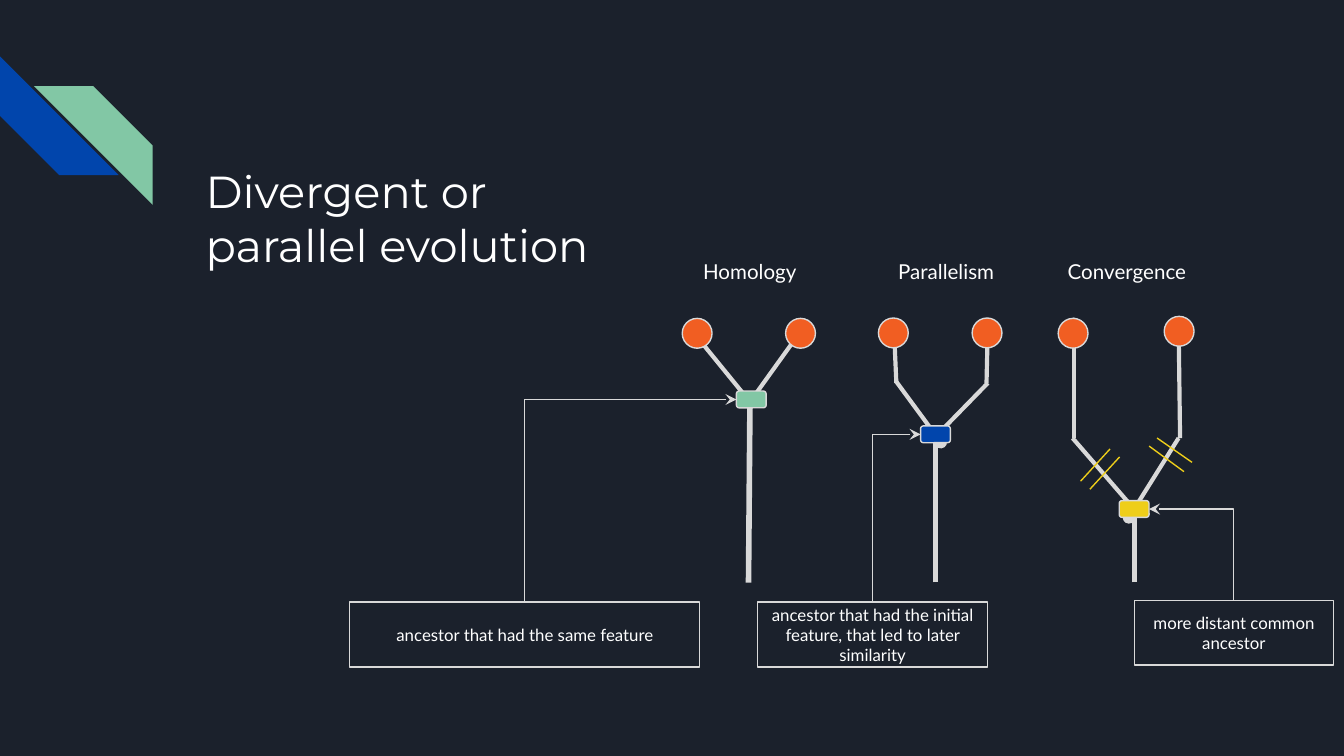
from dataclasses import dataclass

from lxml.etree import SubElement
from pptx import Presentation
from pptx.dml.color import RGBColor
from pptx.enum.shapes import MSO_CONNECTOR, MSO_SHAPE
from pptx.enum.text import MSO_ANCHOR, PP_ALIGN
from pptx.oxml.ns import qn
from pptx.util import Pt


@dataclass(frozen=True)
class Theme:
    back: str = "1B212C"
    blue: str = "0145AC"
    green: str = "82C7A5"
    orange: str = "F15E22"
    yellow: str = "EECE1A"
    grey: str = "D9D9D9"
    white: str = "FFFFFF"
    head_font: str = "Montserrat"
    body_font: str = "Lato"
    title: int = 24
    label: int = 11
    note: int = 9
    thin: float = 0.75
    branch: float = 2.25
    stem: float = 3


THEME = Theme()
TIP = 16
NODE_W, NODE_H = 16, 9
NOTE_H = 34.7

TREES = [
    dict(
        label=("Homology", 357.8, 87.8),
        stem=(401, 312.2, 401.8, 213.1),
        branches=[(401.8, 215.3, 370.1, 176.4, "oval"),
                  (401.8, 215.3, 431.3, 174.2, "oval")],
        tips=[(365.5, 170.6), (420.9, 170.6)],
        cuts=[],
        node=(394.5, 209.5, THEME.green),
        note=("ancestor that had the same feature", 187.4, 322.6, 187.4),
    ),
    dict(
        label=("Parallelism", 463, 87.8),
        stem=(501.1, 312, 501.1, 236.9),
        branches=[(480.2, 205.2, 478.8, 174.2, "oval"),
                  (528.5, 205.2, 529.2, 174.2, "oval"),
                  (480.2, 204.5, 504, 236.9, "oval"),
                  (529.2, 205.2, 501.8, 233.3, None)],
        tips=[(470.6, 170.4), (520.8, 170.4)],
        cuts=[],
        node=(493.2, 228.2, THEME.blue),
        note=("ancestor that had the initial feature, that led to later similarity",
              405.9, 322.6, 123.1),
    ),
    dict(
        label=("Convergence", 555.1, 97.2),
        stem=(607.7, 312, 607.7, 277.2),
        branches=[(632.2, 234.7, 631.4, 172.8, "oval"),
                  (575.3, 234.7, 575.3, 173.5, "oval"),
                  (631.4, 234.7, 604.8, 277.2, "oval"),
                  (574.6, 234.7, 607.7, 272.9, None)],
        tips=[(566.9, 170.6), (623.7, 169.5)],
        cuts=[(594.7, 240.5, 578.9, 257.8), (599.8, 244.8, 583.9, 262.1),
              (615.6, 239, 634.3, 252.7), (619.9, 234.7, 638.6, 247.7)],
        node=(599.6, 268.2, THEME.yellow),
        note=("more distant common ancestor", 607.7, 321.6, 106.6),
    ),
]


def apply(obj, values):
    for name, value in values.items():
        setattr(obj, name, value)


def rgb(color):
    return RGBColor.from_string(color)


def add_shape(s, kind, x, y, w, h, fill=None, line=None):
    sp = s.shapes.add_shape(kind, Pt(x), Pt(y), Pt(w), Pt(h))
    sp.shadow.inherit = False
    if fill:
        sp.fill.solid()
        sp.fill.fore_color.rgb = rgb(fill)
    else:
        sp.fill.background()
    if line:
        sp.line.color.rgb = rgb(line)
        sp.line.width = Pt(THEME.thin)
    else:
        sp.line.fill.background()
    return sp


def write(sp, text, size, font=THEME.body_font,
          align=PP_ALIGN.CENTER, anchor=MSO_ANCHOR.MIDDLE):
    tf = sp.text_frame
    inset = Pt(7.2)
    apply(tf, dict(word_wrap=True, vertical_anchor=anchor,
                   margin_left=inset, margin_right=inset,
                   margin_top=inset, margin_bottom=inset))
    p = tf.paragraphs[0]
    p.alignment = align
    r = p.add_run()
    r.text = text
    apply(r.font, dict(name=font, size=Pt(size)))
    r.font.color.rgb = rgb(THEME.white)


def add_text(s, x, y, w, h, text, size, **style):
    write(s.shapes.add_textbox(Pt(x), Pt(y), Pt(w), Pt(h)), text, size, **style)


def add_line(s, x1, y1, x2, y2, color, width, tail=None,
             kind=MSO_CONNECTOR.STRAIGHT):
    cn = s.shapes.add_connector(kind, Pt(x1), Pt(y1), Pt(x2), Pt(y2))
    cn.line.color.rgb = rgb(color)
    cn.line.width = Pt(width)
    if tail:
        SubElement(cn.line._get_or_add_ln(), qn("a:tailEnd"), type=tail)
    SubElement(cn._element.spPr, qn("a:effectLst"))
    return cn


def add_bent_arrow(s, x1, y1, x2, y2):
    w, h = abs(y2 - y1), abs(x2 - x1)
    x, y = (x1 + x2 - w) / 2, (y1 + y2 - h) / 2
    cn = add_line(s, x, y, x + w, y + h, THEME.grey, THEME.thin, "stealth",
                  MSO_CONNECTOR.ELBOW)
    spPr = cn._element.spPr
    spPr.find(qn("a:prstGeom")).set("prst", "bentConnector2")
    xfrm = spPr.find(qn("a:xfrm"))
    if x2 > x1:
        xfrm.set("rot", str(270 * 60000))
    else:
        xfrm.set("rot", str(90 * 60000))
        xfrm.set("flipH", "1")


def add_stripe(s, x, y, color, rotation):
    sp = add_shape(s, MSO_SHAPE.DIAGONAL_STRIPE, x, y, 63.6, 63.6, color)
    sp.rotation = rotation


def add_note(s, text, x, y, w, node_x, node_y):
    sp = add_shape(s, MSO_SHAPE.RECTANGLE, x, y, w, NOTE_H, line=THEME.grey)
    write(sp, text, THEME.note)
    center = x + w / 2
    side = node_x if center < node_x else node_x + NODE_W
    add_bent_arrow(s, center, y, side, node_y + NODE_H / 2)


def add_tree(s, label, stem, branches, tips, cuts, node, note):
    add_line(s, *stem, THEME.grey, THEME.stem)
    for *ends, tail in branches:
        add_line(s, *ends, THEME.grey, THEME.branch, tail)
    for x, y in tips:
        add_shape(s, MSO_SHAPE.OVAL, x, y, TIP, TIP, THEME.orange, THEME.grey)
    for cut in cuts:
        add_line(s, *cut, THEME.yellow, THEME.thin)
    x, y, color = node
    add_shape(s, MSO_SHAPE.ROUNDED_RECTANGLE, x, y, NODE_W, NODE_H, color, THEME.grey)
    name, left, width = label
    add_text(s, left, 130.3, width, 30.2, name, THEME.label)
    add_note(s, *note, x, y)


def main():
    prs = Presentation()
    apply(prs, dict(slide_width=Pt(720), slide_height=Pt(405)))
    s = prs.slides.add_slide(prs.slide_layouts[6])
    s.background.fill.solid()
    s.background.fill.fore_color.rgb = rgb(THEME.back)
    add_stripe(s, 0, 30.2, THEME.blue, 270)
    add_stripe(s, 18.2, 46.2, THEME.green, 90)
    add_text(s, 103, 80.6, 239, 138.2, "Divergent or parallel evolution",
             THEME.title, font=THEME.head_font,
             align=PP_ALIGN.LEFT, anchor=MSO_ANCHOR.TOP)
    for tree in TREES:
        add_tree(s, **tree)
    prs.save("out.pptx")


if __name__ == "__main__":
    main()
